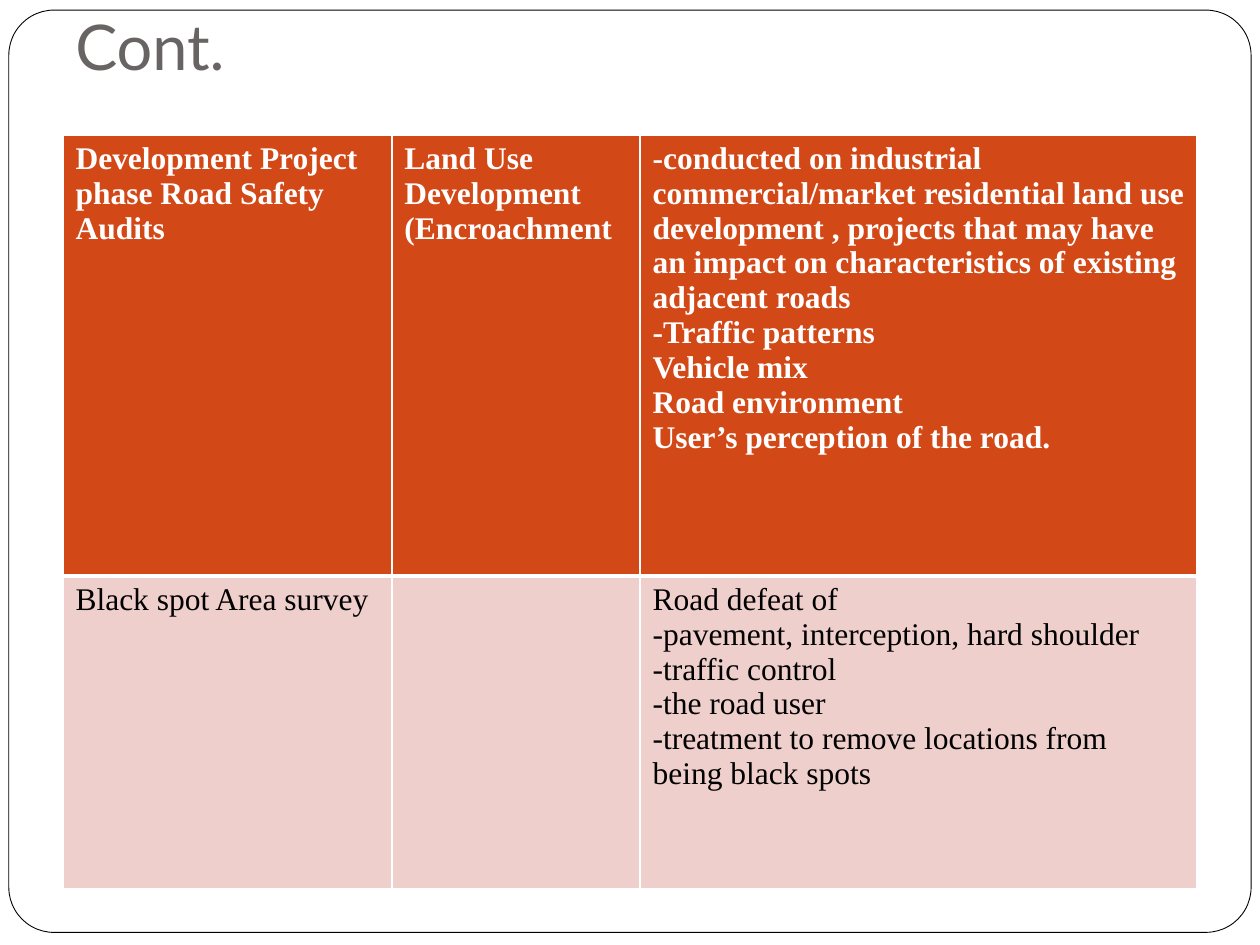
"""Build the continued road safety audit table slide."""
from dataclasses import dataclass

from lxml.etree import SubElement
from pptx import Presentation
from pptx.dml.color import RGBColor
from pptx.enum.shapes import MSO_SHAPE
from pptx.enum.text import MSO_ANCHOR
from pptx.oxml.ns import qn
from pptx.slide import Slide
from pptx.table import _Cell
from pptx.util import Inches, Pt

WHITE = RGBColor(0xFF, 0xFF, 0xFF)
BLACK = RGBColor(0, 0, 0)
GREY = RGBColor(0x69, 0x64, 0x64)
ORANGE = RGBColor(0xD3, 0x48, 0x17)
PINK = RGBColor(0xEF, 0xCF, 0xCC)
COLUMN_WIDTHS = (2.61, 1.97, 4.42)


@dataclass(frozen=True)
class AuditRow:
    height: float
    fill: RGBColor
    ink: RGBColor
    bold: bool
    borders: dict[str, int]
    texts: tuple[str, str, str]


AUDIT_ROWS = (
    AuditRow(3.5, ORANGE, WHITE, True, {"lnL": 1, "lnR": 1, "lnT": 1, "lnB": 3}, (
        "Development Project phase Road Safety Audits",
        "Land Use Development (Encroachment",
        "-conducted on industrial commercial/market residential land use development , "
        "projects that may have an impact on characteristics of existing adjacent roads\n"
        "-Traffic patterns\nVehicle mix\nRoad environment\n"
        "User’s perception of the road.",
    )),
    AuditRow(2.48, PINK, BLACK, False, {"lnL": 1, "lnR": 1, "lnB": 1}, (
        "Black spot Area survey",
        "",
        "Road defeat of\n-pavement, interception, hard shoulder\n-traffic control\n"
        "-the road user\n-treatment to remove locations from being black spots",
    )),
)


def add_frame(slide: Slide) -> None:
    frame = slide.shapes.add_shape(
        MSO_SHAPE.ROUNDED_RECTANGLE, Inches(0.07), Inches(0.08), Inches(9.86), Inches(7.32))
    frame.adjustments[0] = 0.049
    frame.shadow.inherit = False
    frame.fill.solid()
    frame.fill.fore_color.rgb = WHITE
    frame.line.color.rgb = BLACK
    frame.line.width = Pt(0.5)


def add_title(slide: Slide) -> None:
    title = slide.shapes.add_textbox(
        Inches(0.5), Inches(0.3), Inches(9), Inches(0.46)).text_frame
    title.word_wrap = True
    title.vertical_anchor = MSO_ANCHOR.BOTTOM
    title.margin_bottom = Inches(0.1)
    heading = title.paragraphs[0]
    heading.text = "Cont."
    heading.font.name = "Lato"
    heading.font.size = Pt(36)
    heading.font.color.rgb = GREY


def set_borders(cell: _Cell, borders: dict[str, int]) -> None:
    properties = cell._tc.get_or_add_tcPr()
    for position, (side, width) in enumerate(borders.items()):
        border = SubElement(properties, qn(f"a:{side}"), w=str(Pt(width)))
        fill = SubElement(border, qn("a:solidFill"))
        SubElement(fill, qn("a:srgbClr"), val=str(WHITE))
        properties.insert(position, border)


def fill_cell(cell: _Cell, text: str, row: AuditRow) -> None:
    cell.fill.solid()
    cell.fill.fore_color.rgb = row.fill
    set_borders(cell, row.borders)
    cell.text = text
    for paragraph in cell.text_frame.paragraphs:
        paragraph.font.name = "Times New Roman"
        paragraph.font.size = Pt(18)
        paragraph.font.bold = row.bold
        paragraph.font.color.rgb = row.ink


def add_audits(slide: Slide) -> None:
    audits = slide.shapes.add_table(
        len(AUDIT_ROWS), len(COLUMN_WIDTHS),
        Inches(0.5), Inches(1.07), Inches(9), Inches(5.98)).table
    for column, width in zip(audits.columns, COLUMN_WIDTHS):
        column.width = Inches(width)
    for table_row, audit in zip(audits.rows, AUDIT_ROWS):
        table_row.height = Inches(audit.height)
        for cell, text in zip(table_row.cells, audit.texts):
            fill_cell(cell, text, audit)


def main() -> None:
    deck = Presentation()
    deck.slide_width = Inches(10)
    deck.slide_height = Inches(7.5)
    slide = deck.slides.add_slide(deck.slide_layouts[6])
    add_frame(slide)
    add_title(slide)
    add_audits(slide)
    deck.save("out.pptx")


if __name__ == "__main__":
    main()
